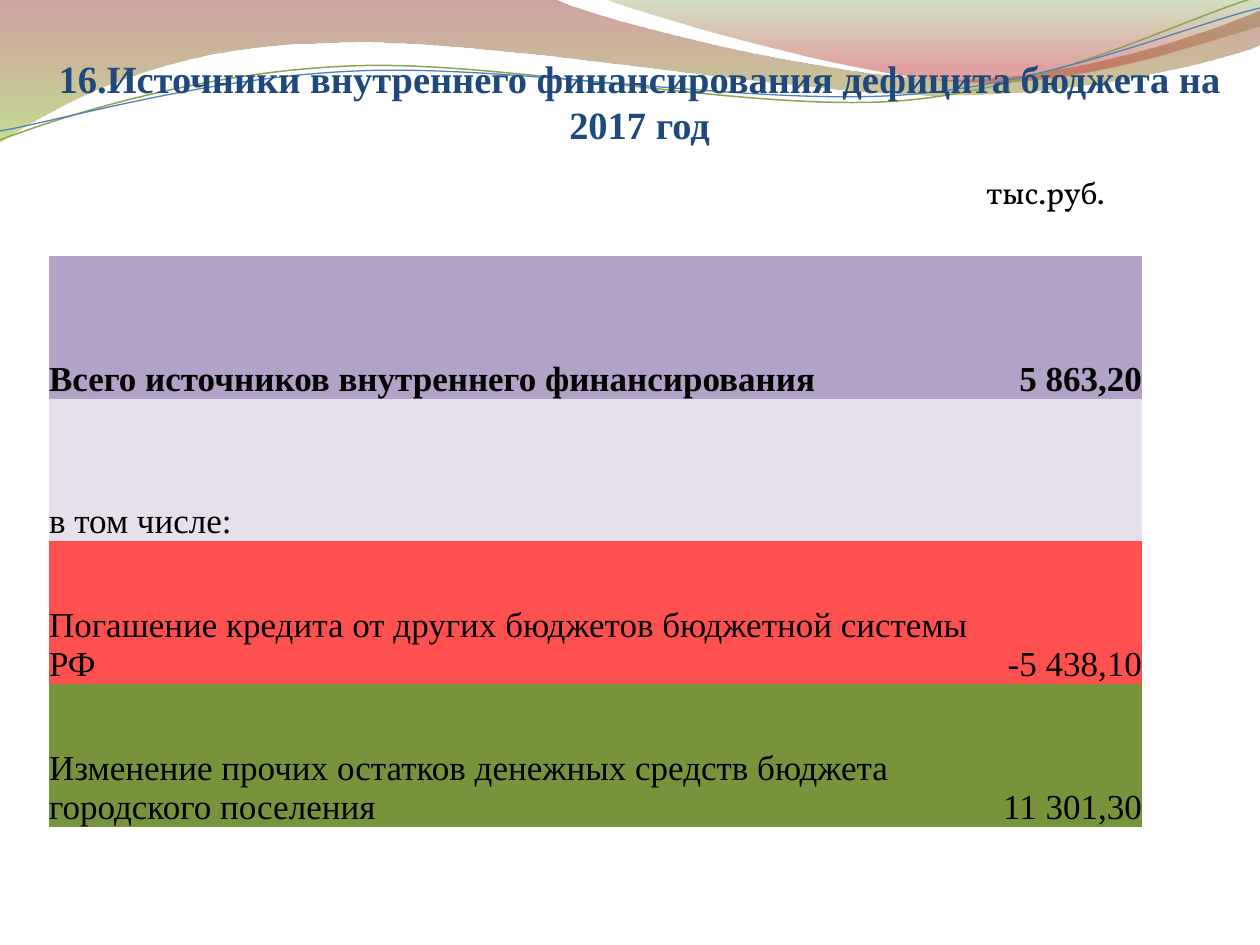
from lxml.etree import SubElement as SubEl
from pptx import Presentation
from pptx.dml.color import RGBColor as Rgb
from pptx.enum.text import MSO_ANCHOR as Anchor, MSO_AUTO_SIZE as Fit, PP_ALIGN as Align
from pptx.oxml.ns import qn
from pptx.util import Pt

SCALE = 914400 / 126  # EMU in one px
SERIF = "Times New Roman"
PLAIN = "{2D5ABB26-0587-4C30-8999-92F81FD0307C}"  # table style without grid
HEX = {
    "title": "1F497D", "text": "000000",
    "brick": "973330", "lime": "95C238", "moss": "769537", "red": "BE3330",
    "green": "89A54F", "blue": "4F81BD",
    "total": "B3A2C7", "note": "E6E0EC", "loan": "FF5050", "rest": "77933C",
}
ROWS = [
    ("Всего источников внутреннего финансирования", "5 863,20", "total"),
    ("в том числе:", "", "note"),
    ("Погашение кредита от других бюджетов бюджетной системы РФ", "-5 438,10", "loan"),
    ("Изменение прочих остатков денежных средств бюджета городского поселения",
     "11 301,30", "rest"),
]

# Wave outlines: a point is a straight step, six numbers are a Bezier curve
BAND = [
    (0, 0), (554, -1), (600, 21, 837, 79, 955, 79), (1075, 79, 1207, 33, 1260, 11),
    (1261, 45), (1239, 55, 1096, 96, 940, 95), (784, 95, 481, 35, 324, 43),
    (163, 45, 58, 105, -1, 142),
]
CREST = [(604, -1), (641, 14, 859, 78, 969, 82), (1079, 87, 1211, 40, 1260, 26), (1260, 0)]
UPPER = [(0, 140), (60, 117, 199, 72, 349, 66), (498, 59, 747, 112, 898, 101),
         (1050, 89, 1182, 19, 1257, -3)]
LOWER = [(0, 131), (59, 121, 207, 77, 357, 71), (508, 64, 752, 106, 903, 95),
         (1053, 84, 1186, 26, 1260, 8)]


def px(num):
    return round(num * SCALE)


def tint(name):
    return Rgb.from_string(HEX[name])


def write(frame, text, size=20, font=SERIF, color="text", bold=False, align=Align.LEFT):
    para = frame.paragraphs[0]
    para.alignment = align
    run = para.add_run()
    run.text = text
    face = run.font
    face.size, face.name, face.bold = Pt(size), font, bold
    face.color.rgb = tint(color)


def bend(wave, steps):
    """Turn the straight segments of curved steps into Bezier curves."""
    lines = list(wave._element.iter(qn("a:lnTo")))
    for line, step in zip(lines, steps[1:]):
        if len(step) == 2:
            continue
        line.tag = qn("a:cubicBezTo")
        for old in list(line):
            line.remove(old)
        for x, y in zip(step[::2], step[1::2]):
            SubEl(line, qn("a:pt"), x=str(px(x) - wave.left), y=str(px(y) - wave.top))


def add_wave(slide, steps, close):
    dots = [(px(step[-2]), px(step[-1])) for step in steps]
    pen = slide.shapes.build_freeform(*dots[0], scale=1.0)
    pen.add_line_segments(dots[1:], close=close)
    wave = pen.convert_to_shape()
    wave.shadow.inherit = False
    bend(wave, steps)
    return wave


def add_band(slide, steps, stops):
    band = add_wave(slide, steps, True)
    band.line.fill.background()
    band.fill.gradient()
    band.fill.gradient_angle = 270  # runs from top to bottom
    for stop, (place, name, alpha) in zip(band.fill.gradient_stops, stops):
        stop.position = place
        stop.color.rgb = tint(name)
        color = stop.color._xFill.find(qn("a:srgbClr"))
        SubEl(color, qn("a:alpha"), val=str(alpha * 1000))


def add_line(slide, steps, name, width):
    wave = add_wave(slide, steps, False)
    wave.fill.background()
    wave.line.color.rgb = tint(name)
    wave.line.width = Pt(width)


def set_title(slide, text):
    title = slide.shapes.title
    title.left, title.top, title.width, title.height = map(px, (54, 39, 1171, 108))
    frame = title.text_frame
    frame.margin_left = frame.margin_right = frame.margin_bottom = 0
    frame.margin_top = px(6)
    frame.vertical_anchor = Anchor.BOTTOM
    frame.word_wrap, frame.auto_size = True, Fit.NONE
    write(frame, text, size=22, color="title", bold=True, align=Align.CENTER)
    slide.shapes._spTree.append(title._element)  # in front of the waves


def add_sums(slide):
    box = map(px, (49, 256, 1093, 571))
    table = slide.shapes.add_table(len(ROWS), 2, *box).table
    table._tbl.tblPr.find(qn("a:tableStyleId")).text = PLAIN
    for col, width in zip(table.columns, (921, 172)):
        col.width = px(width)
    for i, (label, value, fill) in enumerate(ROWS):
        for cell, text, align in zip(table.rows[i].cells, (label, value),
                                     (Align.LEFT, Align.RIGHT)):
            cell.margin_left = cell.margin_right = 0
            cell.margin_top = cell.margin_bottom = 0
            cell.vertical_anchor = Anchor.BOTTOM
            cell.fill.solid()
            cell.fill.fore_color.rgb = tint(fill)
            if text:
                write(cell.text_frame, text, bold=i == 0, align=align)


def add_unit(slide, text):
    frame = slide.shapes.add_textbox(*map(px, (974, 167, 144, 50))).text_frame
    frame.word_wrap, frame.auto_size = True, Fit.SHAPE_TO_FIT_TEXT
    write(frame, text, size=18, font="Vollkorn")


def main():
    deck = Presentation()
    deck.slide_width, deck.slide_height = px(1260), px(945)
    slide = deck.slides.add_slide(deck.slide_layouts[5])
    # Waves at the top
    add_band(slide, BAND, [(0, "brick", 45), (1, "lime", 55)])
    add_band(slide, CREST, [(0, "moss", 30), (0.8, "red", 45)])
    add_line(slide, UPPER, "green", 0.85)
    add_line(slide, LOWER, "blue", 0.75)
    # Title, table and unit of the sums
    set_title(slide, "16.Источники внутреннего финансирования дефицита бюджета на 2017 год")
    add_sums(slide)
    add_unit(slide, "тыс.руб.")
    deck.save("out.pptx")


if __name__ == "__main__":
    main()
